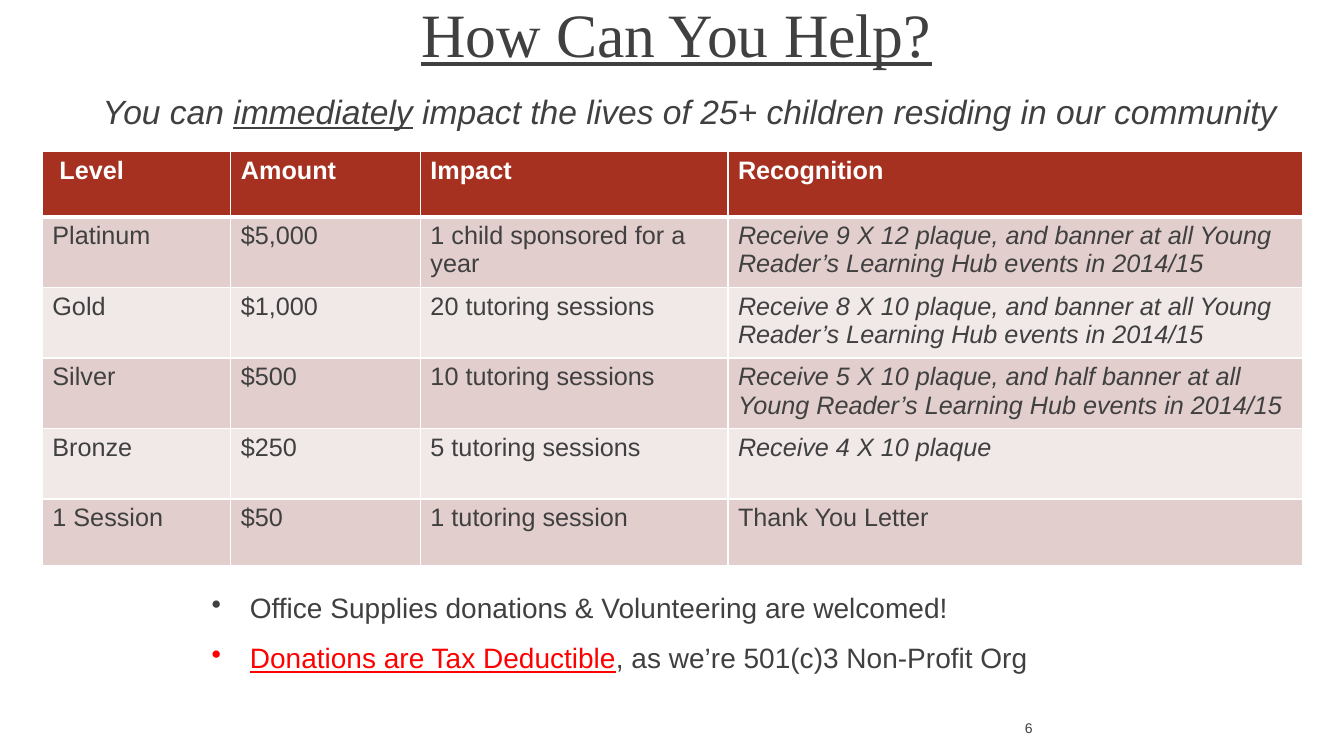
from dataclasses import dataclass

from lxml import etree
from pptx import Presentation
from pptx.dml.color import RGBColor
from pptx.enum.text import MSO_ANCHOR, PP_ALIGN
from pptx.oxml.ns import qn
from pptx.util import Emu, Pt

PX = 9144  # EMU in one px, 100 px to the inch
LEFT, CENTER, RIGHT = PP_ALIGN.LEFT, PP_ALIGN.CENTER, PP_ALIGN.RIGHT
TOP, MIDDLE, BOTTOM = MSO_ANCHOR.TOP, MSO_ANCHOR.MIDDLE, MSO_ANCHOR.BOTTOM

WHITE = RGBColor(0xFF, 0xFF, 0xFF)
GRAY = RGBColor(0x40, 0x40, 0x40)
RED = RGBColor(0xFF, 0x00, 0x00)
BRICK = RGBColor(0xA6, 0x31, 0x21)
ROSE = RGBColor(0xE1, 0xCE, 0xCD)
PALE = RGBColor(0xF1, 0xE8, 0xE8)


@dataclass(frozen=True)
class Span:
    text: str
    color: RGBColor = GRAY
    under: bool = False


@dataclass(frozen=True)
class Box:
    left: int
    top: int
    width: int
    height: int


@dataclass(frozen=True)
class Level:
    name: str
    amount: str
    impact: str
    thanks: str
    italic: bool = True


EVENTS = "at all Young Reader’s Learning Hub events in 2014/15"
HEADS = (" Level", "Amount", "Impact", "Recognition")
LEVELS = (
    Level("Platinum", "$5,000", "1 child sponsored for a year",
          f"Receive 9 X 12 plaque, and banner {EVENTS}"),
    Level("Gold", "$1,000", "20 tutoring sessions",
          f"Receive 8 X 10 plaque, and banner {EVENTS}"),
    Level("Silver", "$500", "10 tutoring sessions",
          f"Receive 5 X 10 plaque, and half banner {EVENTS}"),
    Level("Bronze", "$250", "5 tutoring sessions", "Receive 4 X 10 plaque"),
    Level("1 Session", "$50", "1 tutoring session", "Thank You Letter", italic=False),
)
COLS = (187, 188, 305, 570)
ROWS = (65, 70, 70, 70, 70, 66)


def px(size: int) -> Emu:
    return Emu(size * PX)


def write(frame, *lines: tuple[Span, ...], size: int, face: str = "Arial",
          bold: bool = False, italic: bool = False, align: PP_ALIGN = LEFT,
          indent: int = 0, bullet: str = "", after: int = 0,
          spacing: float = 1.0) -> None:
    """Fill a text frame with one paragraph per line of spans."""
    for index, spans in enumerate(lines):
        para = frame.add_paragraph() if index else frame.paragraphs[0]
        para.alignment = align
        para.space_after = Pt(after)
        para.line_spacing = spacing
        props = para._p.get_or_add_pPr()
        props.set("marL", str(px(indent)))
        props.set("indent", str(px(-indent if bullet else 0)))
        if bullet:
            etree.SubElement(props, qn("a:buChar"), char=bullet)
        for span in spans:
            run = para.add_run()
            run.text = span.text
            font = run.font
            font.name, font.size = face, Pt(size)
            font.bold, font.italic, font.underline = bold, italic, span.under
            font.color.rgb = span.color


def add_text(slide, box: Box, *lines: tuple[Span, ...],
             anchor: MSO_ANCHOR = TOP, **style) -> None:
    shape = slide.shapes.add_textbox(
        px(box.left), px(box.top), px(box.width), px(box.height))
    frame = shape.text_frame
    frame.word_wrap = True
    frame.vertical_anchor = anchor
    write(frame, *lines, **style)


def edge(cell, top: int, bottom: int) -> None:
    """Draw white cell borders; widths are in points, the sides are 1."""
    props = cell._tc.get_or_add_tcPr()
    for side, width in (("L", 1), ("R", 1), ("T", top), ("B", bottom)):
        line = etree.SubElement(props, qn(f"a:ln{side}"), w=str(Pt(width)))
        fill = etree.SubElement(line, qn("a:solidFill"))
        etree.SubElement(fill, qn("a:srgbClr"), val=str(WHITE))


def add_levels(slide, box: Box) -> None:
    table = slide.shapes.add_table(
        len(ROWS), len(COLS), px(box.left), px(box.top),
        px(box.width), px(box.height)).table
    table.first_row = table.horz_banding = False
    for col, width in zip(table.columns, COLS):
        col.width = px(width)
    for row, height in zip(table.rows, ROWS):
        row.height = px(height)

    texts = [HEADS] + [(v.name, v.amount, v.impact, v.thanks) for v in LEVELS]
    for r, words in enumerate(texts):
        head = r == 0
        fill = BRICK if head else ROSE if r % 2 else PALE
        for c, word in enumerate(words):
            cell = table.cell(r, c)
            edge(cell, top=3 if r == 1 else 1, bottom=3 if head else 1)
            cell.fill.solid()
            cell.fill.fore_color.rgb = fill
            slant = not head and c == 3 and LEVELS[r - 1].italic
            write(cell.text_frame, (Span(word, WHITE if head else GRAY),),
                  size=18, bold=head, italic=slant)


def main() -> None:
    deck = Presentation()
    deck.slide_width, deck.slide_height = px(1333), px(750)
    slide = deck.slides.add_slide(deck.slide_layouts[6])

    add_text(slide, Box(25, -17, 1292, 92),
             (Span("How Can You Help?", under=True),),
             size=44, face="Times New Roman", align=CENTER, anchor=BOTTOM,
             spacing=0.9)
    add_text(slide, Box(42, 85, 1275, 50),
             (Span("You can "), Span("immediately", under=True),
              Span(" impact the lives of 25+ children residing in our community")),
             size=24, italic=True, indent=50)
    add_levels(slide, Box(42, 150, sum(COLS), sum(ROWS)))
    add_text(slide, Box(200, 581, 842, 94),
             (Span("Office Supplies donations & Volunteering are welcomed!"),),
             (Span("Donations are Tax Deductible", RED, under=True),
              Span(", as we’re 501(c)3 Non-Profit Org")),
             size=20, indent=38, bullet="•", after=12)
    add_text(slide, Box(942, 702, 92, 40), (Span("6"),),
             size=10, align=RIGHT, anchor=MIDDLE)
    deck.save("out.pptx")


if __name__ == "__main__":
    main()
